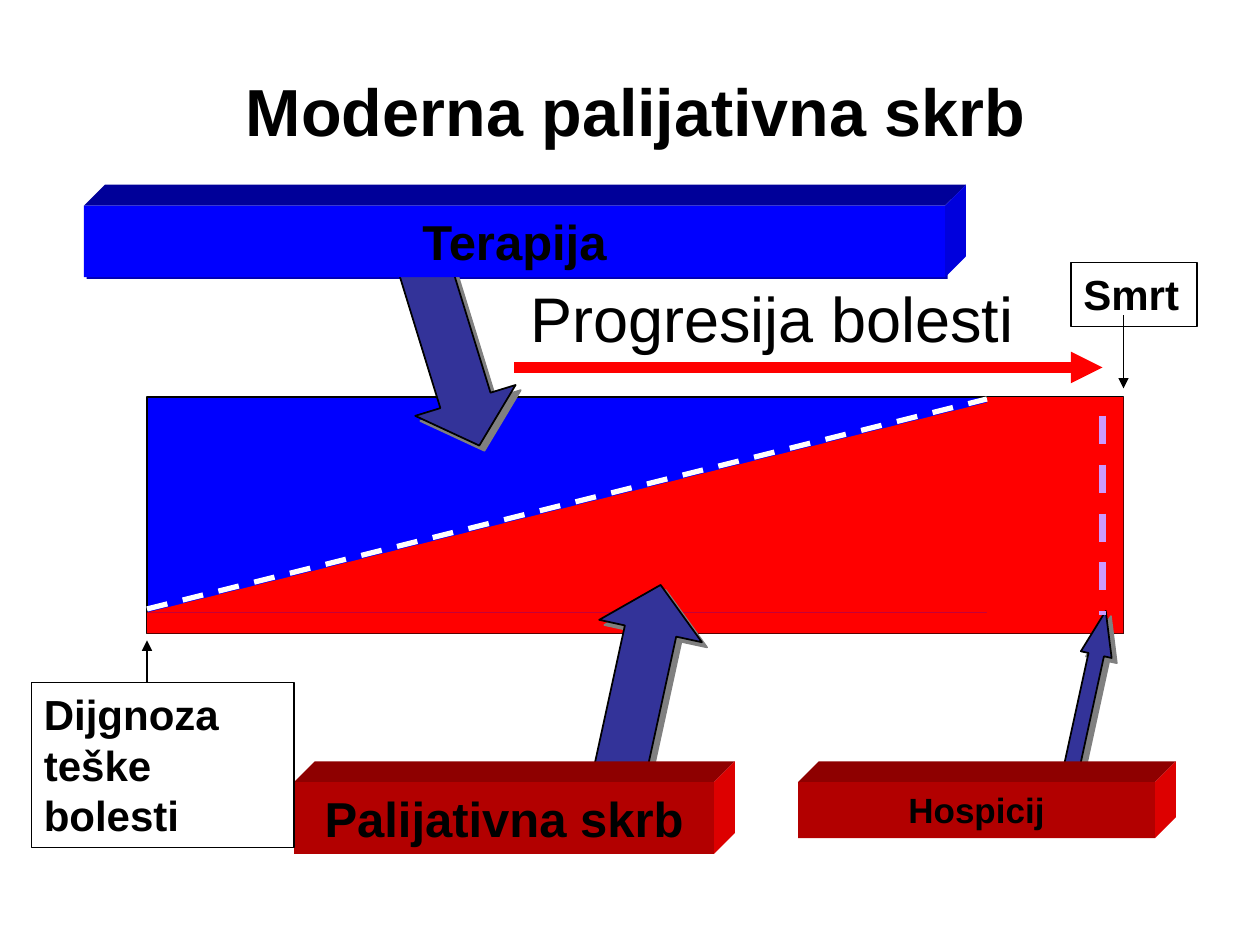
from lxml.etree import SubElement
from pptx import Presentation
from pptx.dml.color import RGBColor
from pptx.enum.dml import MSO_LINE
from pptx.enum.shapes import MSO_CONNECTOR, MSO_SHAPE
from pptx.enum.text import MSO_ANCHOR, MSO_AUTO_SIZE, PP_ALIGN
from pptx.oxml.ns import qn
from pptx.util import Pt

BLACK = RGBColor(0x00, 0x00, 0x00)
WHITE = RGBColor(0xFF, 0xFF, 0xFF)
BLUE = RGBColor(0x00, 0x00, 0xFF)
BLUE_TOP = RGBColor(0x00, 0x00, 0x99)
BLUE_SIDE = RGBColor(0x00, 0x00, 0xDD)
BLUE_EDGE = RGBColor(0x00, 0x00, 0xB2)
RED = RGBColor(0xFF, 0x00, 0x00)
RED_FRONT = RGBColor(0xB2, 0x00, 0x00)
RED_TOP = RGBColor(0x8E, 0x00, 0x00)
RED_SIDE = RGBColor(0xDD, 0x00, 0x00)
INDIGO = RGBColor(0x33, 0x33, 0x99)
LILAC = RGBColor(0xCC, 0x99, 0xFF)


class Diagram:
    font = "Arial"
    depth = 12

    def __init__(self, slide):
        self.slide = slide
        self.shapes = slide.shapes

    def add_text(self, frame, text, size, bold=True, align=PP_ALIGN.CENTER, anchor=MSO_ANCHOR.TOP):
        frame.word_wrap = True
        frame.auto_size = MSO_AUTO_SIZE.NONE
        frame.vertical_anchor = anchor
        paragraph = frame.paragraphs[0]
        paragraph.alignment = align
        run = paragraph.add_run()
        run.text = text
        run.font.name = self.font
        run.font.size = Pt(size)
        run.font.bold = bold
        run.font.color.rgb = BLACK

    def title(self, text, left, top, width, height):
        title = self.shapes.title
        title.left, title.top, title.width, title.height = map(Pt, (left, top, width, height))
        self.add_text(title.text_frame, text, 38, anchor=MSO_ANCHOR.MIDDLE)

    def paint(self, shape, fill, line_width=0):
        shape.shadow.inherit = False
        if fill is None:
            shape.fill.background()
        else:
            shape.fill.solid()
            shape.fill.fore_color.rgb = fill
        if line_width:
            shape.line.color.rgb = BLACK
            shape.line.width = Pt(line_width)
        else:
            shape.line.fill.background()
        return shape

    def block(self, left, top, width, height, fill, line_width=0, kind=MSO_SHAPE.RECTANGLE):
        shape = self.shapes.add_shape(kind, *map(Pt, (left, top, width, height)))
        return self.paint(shape, fill, line_width)

    def wedge(self, left, top, width, height, fill):
        wedge = self.block(left, top, width, height, fill, kind=MSO_SHAPE.RIGHT_TRIANGLE)
        wedge.element.spPr.find(qn("a:xfrm")).set("flipH", "1")

    def face(self, points, fill):
        start, *rest = [(Pt(x), Pt(y)) for x, y in points]
        builder = self.shapes.build_freeform(*start)
        builder.add_line_segments(rest, close=True)
        self.paint(builder.convert_to_shape(), fill)

    def bar(self, text, size, left, top, width, height, front, upper, side):
        right, bottom, d = left + width, top + height, self.depth
        self.face([(left, top), (left + d, top - d), (right + d, top - d), (right, top)], upper)
        self.face([(right, top), (right + d, top - d), (right + d, bottom - d), (right, bottom)], side)
        bar = self.block(left, top, width, height, front)
        self.add_text(bar.text_frame, text, size)

    def label(self, text, left, top, width, height):
        label = self.block(left, top, width, height, None, 0.75)
        self.add_text(label.text_frame, text, 24, align=PP_ALIGN.LEFT)

    def caption(self, text, left, top, width, height):
        caption = self.shapes.add_textbox(*map(Pt, (left, top, width, height)))
        self.add_text(caption.text_frame, text, 36, bold=False)

    def block_arrow(self, left, top, width, height, rotation, head):
        arrow = self.block(left, top, width, height, INDIGO, 1, MSO_SHAPE.UP_ARROW)
        arrow.rotation = rotation
        arrow.adjustments[0] = 0.5
        arrow.adjustments[1] = head
        effects = arrow.element.spPr.find(qn("a:effectLst"))
        shadow = SubElement(effects, qn("a:outerShdw"), dist=str(Pt(4.2)), dir="2700000",
                            algn="ctr", rotWithShape="0")
        SubElement(shadow, qn("a:srgbClr"), val="808080")

    def line(self, x1, y1, x2, y2, color, width, dashed=False, arrow=False):
        line = self.shapes.add_connector(MSO_CONNECTOR.STRAIGHT, *map(Pt, (x1, y1, x2, y2)))
        properties = line.element.spPr
        SubElement(properties, qn("a:effectLst"))
        line.line.color.rgb = color
        line.line.width = Pt(width)
        if dashed:
            line.line.dash_style = MSO_LINE.DASH
        if arrow:
            SubElement(properties.find(qn("a:ln")), qn("a:tailEnd"), type="triangle")


def main():
    deck = Presentation()
    deck.slide_width, deck.slide_height = Pt(720), Pt(540)
    diagram = Diagram(deck.slides.add_slide(deck.slide_layouts[5]))

    diagram.title("Moderna palijativna skrb", 43, 30, 641, 66)
    diagram.block(84, 227, 558, 135, BLUE, 1)
    diagram.block(564, 227, 78, 135, RED)
    diagram.line(84, 348, 564, 228, WHITE, 3, dashed=True)
    diagram.block(49.5, 118.5, 492, 41, BLUE_EDGE)
    diagram.block_arrow(228, 149, 60, 108, 162.9, 0.45)
    diagram.block_arrow(612, 348, 18, 102, 12.3, 1.42)
    diagram.wedge(84, 230, 480, 120, RED)
    diagram.block(84, 350, 480, 12, RED)
    diagram.block_arrow(336, 333, 60, 108, 12.3, 0.45)
    diagram.line(630, 237.5, 630, 351.5, LILAC, 4, dashed=True)

    diagram.bar("Terapija", 28, 48, 117.5, 492, 41, BLUE, BLUE_TOP, BLUE_SIDE)
    for text, size, left, width, height in (
        ("Palijativna skrb", 28, 168, 240, 41),
        ("Hospicij", 20, 456, 204, 32),
    ):
        diagram.bar(text, size, left, 447, width, height, RED_FRONT, RED_TOP, RED_SIDE)

    diagram.label("Dijgnoza teške bolesti", 18, 390, 150, 94.5)
    diagram.line(84, 390, 84, 366, BLACK, 0.75, arrow=True)
    diagram.label("Smrt", 612, 150, 72, 36.5)
    diagram.line(642, 180, 642, 222, BLACK, 0.75, arrow=True)
    diagram.line(294, 210, 630, 210, RED, 6, arrow=True)
    diagram.caption("Progresija bolesti", 252, 156, 378, 50.5)

    deck.save("out.pptx")


if __name__ == "__main__":
    main()
